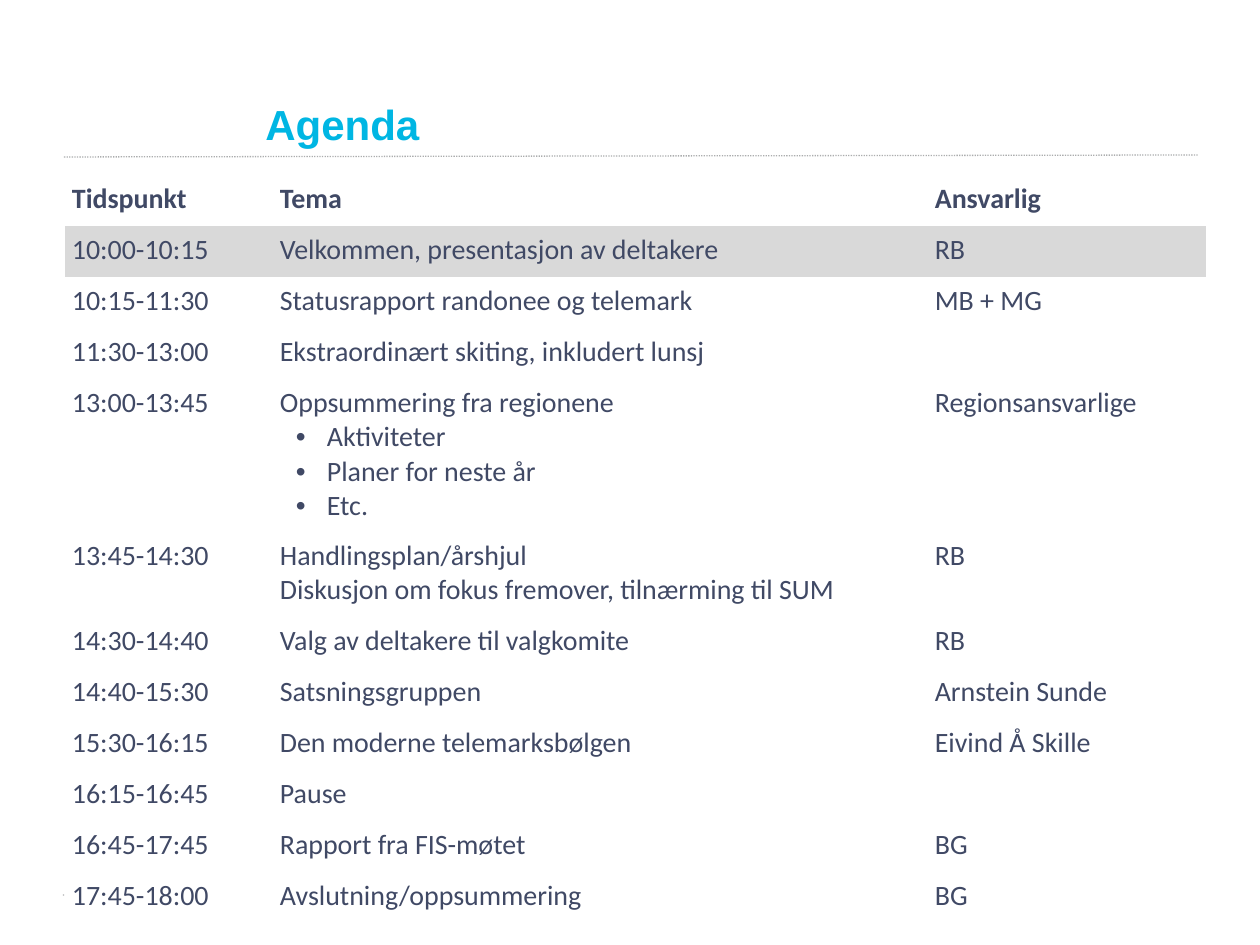
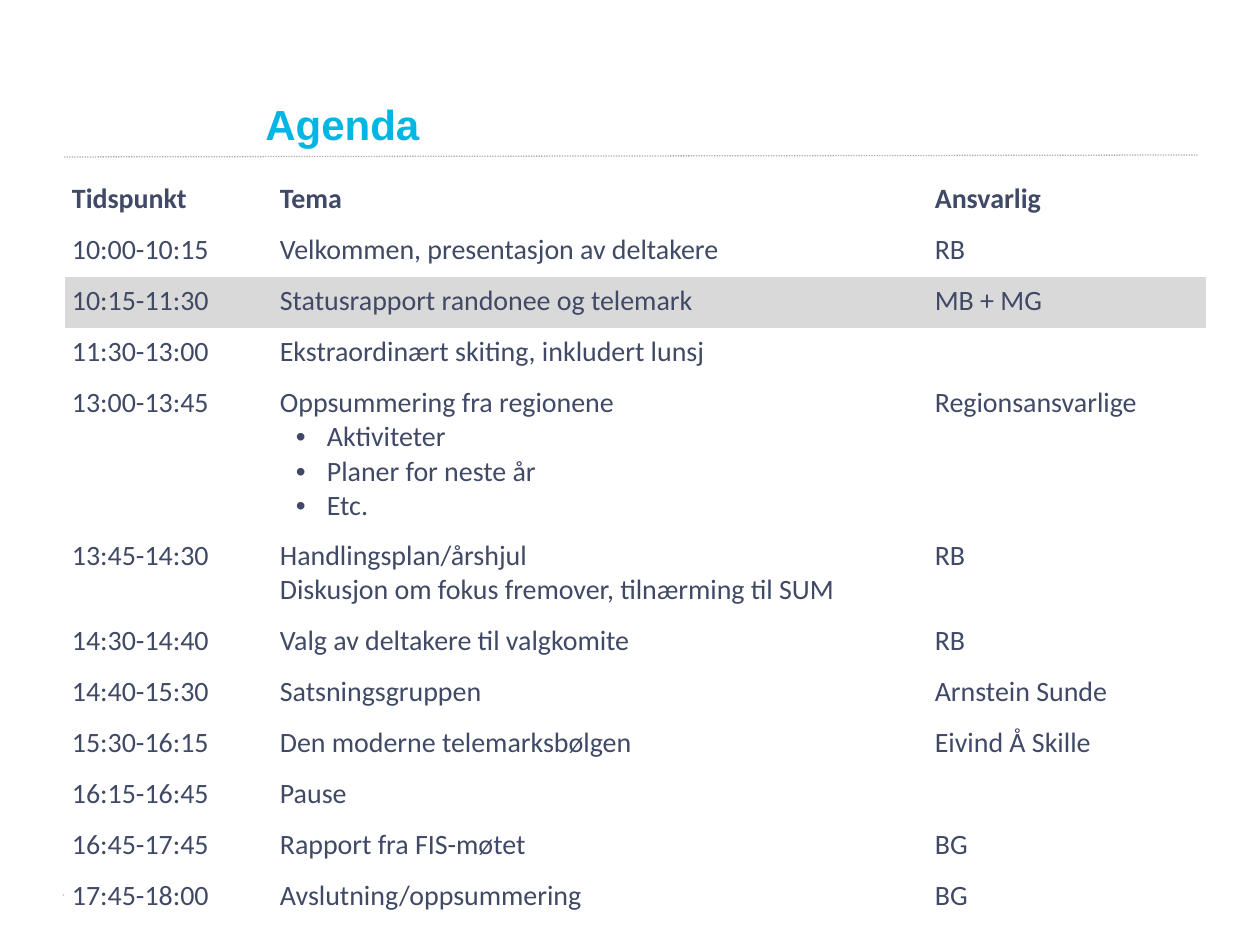
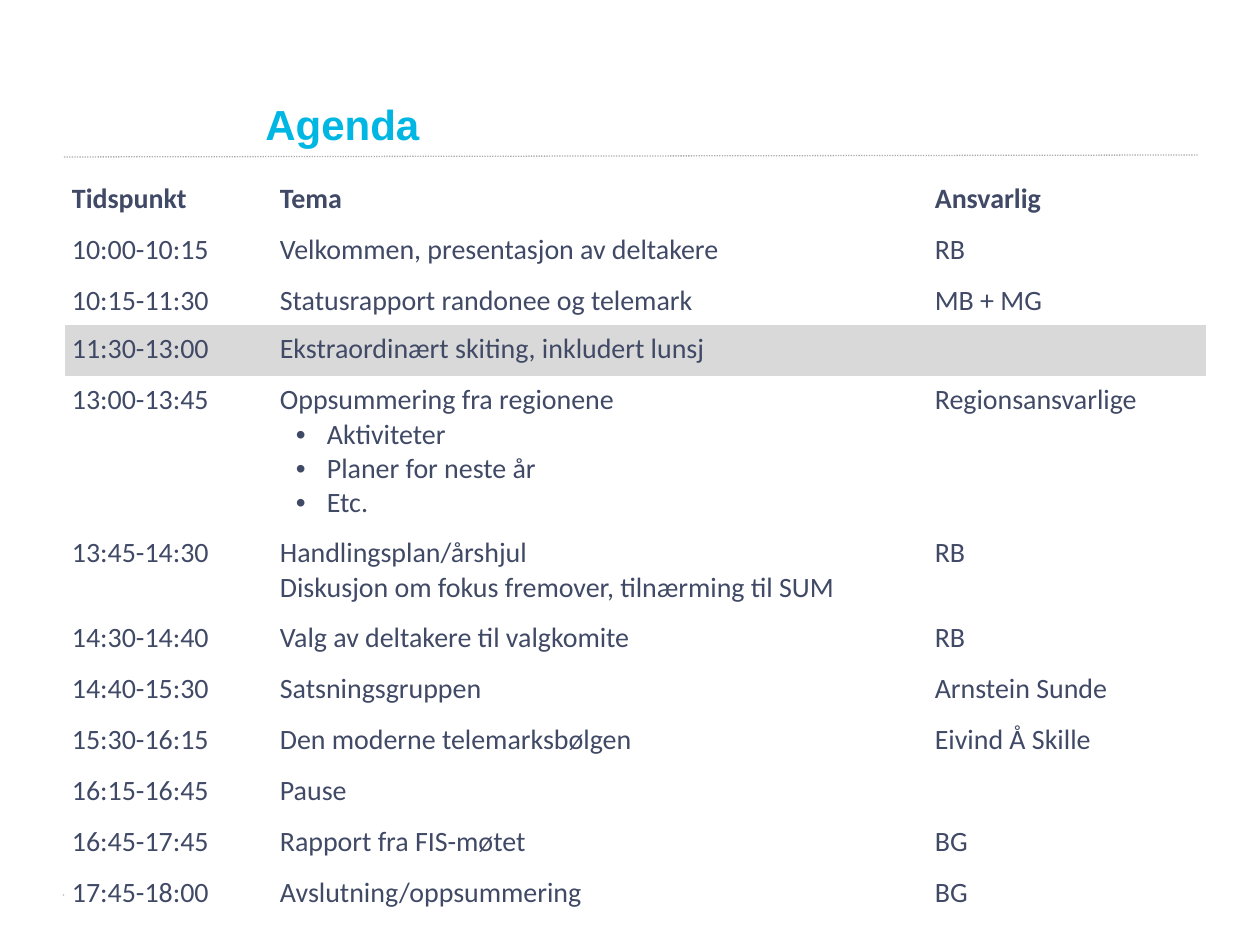
from dataclasses import dataclass

from lxml import etree
from pptx import Presentation
from pptx import util as u
from pptx.dml.color import RGBColor
from pptx.enum import dml, shapes, text
from pptx.oxml.ns import qn

TITLE = "Agenda"
HEADER = ("Tidspunkt", "Tema", "Ansvarlig")
BULLET = "•"
AGENDA = [
    ("10:00-10:15", "Velkommen, presentasjon av deltakere", "RB"),
    ("10:15-11:30", "Statusrapport randonee og telemark", "MB + MG"),
    ("11:30-13:00", "Ekstraordinært skiting, inkludert lunsj", ""),
    ("13:00-13:45", "Oppsummering fra regionene\n•Aktiviteter\n•Planer for neste år\n•Etc.",
     "Regionsansvarlige"),
    ("13:45-14:30", "Handlingsplan/årshjul\nDiskusjon om fokus fremover, tilnærming til SUM", "RB"),
    ("14:30-14:40", "Valg av deltakere til valgkomite", "RB"),
    ("14:40-15:30", "Satsningsgruppen", "Arnstein Sunde"),
    ("15:30-16:15", "Den moderne telemarksbølgen", "Eivind Å Skille"),
    ("16:15-16:45", "Pause", ""),
    ("16:45-17:45", "Rapport fra FIS-møtet", "BG"),
    ("17:45-18:00", "Avslutning/oppsummering", "BG"),
]
# Highlighted agenda row on each slide, with the heights of rows that differ
SLIDES = [(1, {}), (2, {}), (3, {2: 48})]


@dataclass(frozen=True)
class Theme:
    title: str = "00B6E3"
    ink: str = "404965"
    rule: str = "ACADAE"
    paper: str = "FFFFFF"
    highlight: str = "D9D9D9"
    title_font: str = "Arial"
    body_font: str = "Calibri"
    title_size: int = 24
    body_size: int = 16


T = Theme()
PX = u.Inches(1) // 126
RULES = [(63, 895, 1206, 890), (64, 157, 1198, 155)]
TITLE_BOX = (253, 92, 912, 63)
TABLE_LEFT, TABLE_TOP = 65, 175
COLUMNS = (208, 655, 278)
ROW, LINE, PAD = 51, 34, 7
BULLET_LEFT, BULLET_HANG = 47, 31
NO_STYLE = "{2D5ABB26-0587-4C30-8999-92F81FD0307C}"


def px(*values):
    return [v * PX for v in values]


def add_run(p, words, font, size, color, bold):
    r = p.add_run()
    r.text = words
    r.font.name, r.font.size, r.font.bold = font, u.Pt(size), bold
    r.font.color.rgb = RGBColor.from_string(color)


def add_rule(s, ends):
    line = s.shapes.add_connector(shapes.MSO_CONNECTOR.STRAIGHT, *px(*ends))
    line.line.color.rgb = RGBColor.from_string(T.rule)
    line.line.width = u.Pt(0.75)
    line.line.dash_style = dml.MSO_LINE.ROUND_DOT
    etree.SubElement(line._element.spPr, qn("a:effectLst"))


def add_title(s):
    tf = s.shapes.add_textbox(*px(*TITLE_BOX)).text_frame
    tf.word_wrap = True
    tf.vertical_anchor = text.MSO_ANCHOR.BOTTOM
    add_run(tf.paragraphs[0], TITLE, T.title_font, T.title_size, T.title, True)


def make_bullet(p):
    pPr = p._p.get_or_add_pPr()
    pPr.set("marL", str(BULLET_LEFT * PX))
    pPr.set("indent", str(-BULLET_HANG * PX))
    etree.SubElement(pPr, qn("a:buFont"), typeface="Arial")
    etree.SubElement(pPr, qn("a:buChar"), char=BULLET)


def fill_cell(cell, words, fill, bold):
    cell.fill.solid()
    cell.fill.fore_color.rgb = RGBColor.from_string(fill)
    pad = PAD * PX if words else 0
    cell.margin_left = cell.margin_right = cell.margin_top = cell.margin_bottom = pad
    if not words:
        return
    tf = cell.text_frame
    for i, line in enumerate(words.split("\n")):
        p = tf.add_paragraph() if i else tf.paragraphs[0]
        if line.startswith(BULLET):
            make_bullet(p)
        add_run(p, line.removeprefix(BULLET), T.body_font, T.body_size, T.ink, bold)


def add_agenda(s, current, special_heights):
    rows = [HEADER] + AGENDA
    heights = [special_heights.get(i, ROW + LINE * row[1].count("\n"))
               for i, row in enumerate(rows)]
    frame = s.shapes.add_table(len(rows), len(COLUMNS), *px(
        TABLE_LEFT, TABLE_TOP, sum(COLUMNS), sum(heights)))
    table = frame.table
    table.first_row = table.horz_banding = False
    table._tbl.tblPr.find(qn("a:tableStyleId")).text = NO_STYLE
    for column, width in zip(table.columns, COLUMNS):
        column.width = width * PX
    for i, (row, height) in enumerate(zip(rows, heights)):
        table.rows[i].height = height * PX
        fill = T.highlight if i == current else T.paper
        for j, words in enumerate(row):
            fill_cell(table.cell(i, j), words, fill, i == 0)


def main():
    prs = Presentation()
    prs.slide_width, prs.slide_height = px(1260, 945)
    for current, special_heights in SLIDES:
        s = prs.slides.add_slide(prs.slide_layouts[6])
        for ends in RULES:
            add_rule(s, ends)
        add_agenda(s, current, special_heights)
        add_title(s)
    prs.save("out.pptx")


if __name__ == "__main__":
    main()
